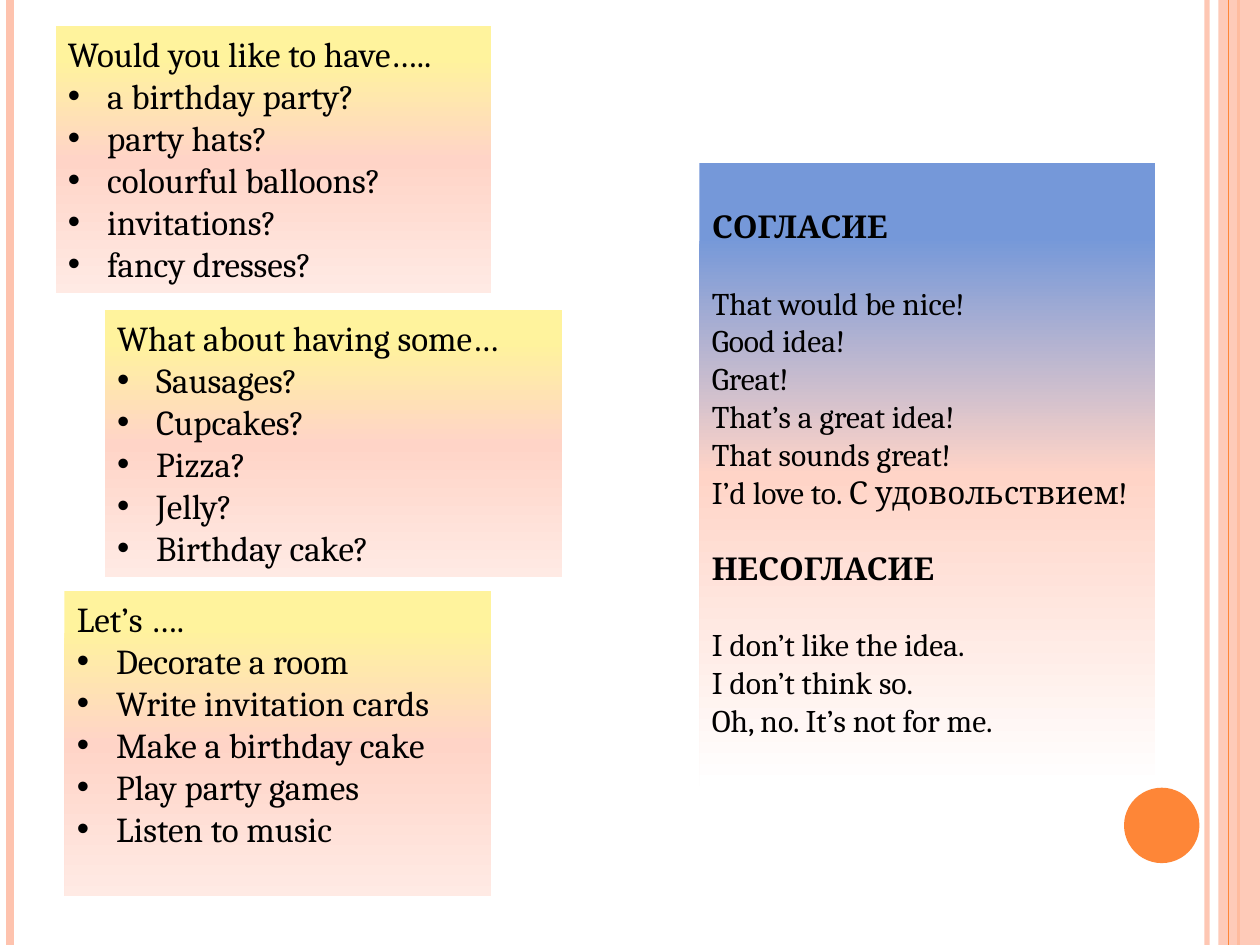
from copy import deepcopy
from dataclasses import dataclass

from lxml import etree
from pptx import Presentation
from pptx.dml.color import RGBColor
from pptx.enum.shapes import MSO_CONNECTOR, MSO_SHAPE
from pptx.enum.text import MSO_ANCHOR, MSO_AUTO_SIZE, PP_ALIGN
from pptx.oxml.ns import qn
from pptx.util import Cm, Pt

STRAIGHT = MSO_CONNECTOR.STRAIGHT
RECTANGLE = MSO_SHAPE.RECTANGLE
OVAL = MSO_SHAPE.OVAL
TOP = MSO_ANCHOR.TOP
NO_AUTOFIT = MSO_AUTO_SIZE.NONE
LEFT = PP_ALIGN.LEFT
BLANK_LAYOUT = 6
SLIDE_WIDTH, SLIDE_HEIGHT = 25.4, 19.05


@dataclass(frozen=True)
class Theme:
    font: str = "Cambria"
    text: str = "000000"
    accent: str = "FE8637"
    pale: str = "FEC3AE"
    list_size: int = 20
    reply_size: int = 18
    reply_gap: int = 22
    list_gradient: tuple = ((12, "FFF39D"), (50, "FFD4C7"), (100, "FFEAE4"))
    reply_gradient: tuple = ((12, "7598D9"), (50, "FFD4C7"), (100, "FFFFFF"))


def apply_format(target, values):
    for name, value in values.items():
        setattr(target, name, value)


class SlideBuilder:
    def __init__(self, slide, theme):
        self.slide = slide
        self.theme = theme

    def set_opacity(self, properties, percent):
        color = next(properties.iter(qn("a:srgbClr")))
        etree.SubElement(color, qn("a:alpha"), val=str(percent * 1000))

    def vertical_line(self, x, color, width, opacity=100):
        line = self.slide.shapes.add_connector(
            STRAIGHT, Cm(x), Cm(0), Cm(x), Cm(SLIDE_HEIGHT))
        line.line.color.rgb = RGBColor.from_string(color)
        line.line.width = Pt(width)
        properties = line._element.spPr
        if opacity < 100:
            self.set_opacity(properties, opacity)
        etree.SubElement(properties, qn("a:effectLst"))

    def plain_shape(self, kind, box):
        shape = self.slide.shapes.add_shape(kind, *map(Cm, box))
        shape.shadow.inherit = False
        shape.line.fill.background()
        return shape

    def solid_shape(self, kind, box, color, opacity=100):
        shape = self.plain_shape(kind, box)
        shape.fill.solid()
        shape.fill.fore_color.rgb = RGBColor.from_string(color)
        if opacity < 100:
            self.set_opacity(shape._element.spPr, opacity)

    def gradient_panel(self, box, stops, top_margin=0.13):
        shape = self.plain_shape(RECTANGLE, box)
        fill = shape.fill
        fill.gradient()
        fill.gradient_angle = 270
        stop_list = next(shape._element.spPr.iter(qn("a:gsLst")))
        stop_list.append(deepcopy(stop_list[-1]))
        for stop, (position, color) in zip(fill.gradient_stops, stops):
            stop.color.rgb = RGBColor.from_string(color)
            stop.position = position / 100
        apply_format(shape.text_frame, {
            "word_wrap": True, "auto_size": NO_AUTOFIT,
            "vertical_anchor": TOP, "margin_top": Cm(top_margin)})
        return shape.text_frame

    def paragraph(self, frame, text, size, bullet=False, bold=False, space=0):
        first = frame.paragraphs[0]
        paragraph = frame.add_paragraph() if first.runs else first
        paragraph.add_run().text = text
        apply_format(paragraph, {"alignment": LEFT, "space_before": Pt(space)})
        if bullet:
            properties = paragraph._p.get_or_add_pPr()
            indent = Cm(0.79)
            properties.set("marL", str(indent))
            properties.set("indent", str(-indent))
            etree.SubElement(properties, qn("a:buFont"), typeface="Arial")
            etree.SubElement(properties, qn("a:buChar"), char="•")
        font = paragraph.runs[0].font
        apply_format(font, {
            "name": self.theme.font, "size": Pt(size), "bold": bold})
        font.color.rgb = RGBColor.from_string(self.theme.text)

    def suggestion_list(self, box, heading, items):
        frame = self.gradient_panel(box, self.theme.list_gradient)
        self.paragraph(frame, heading, self.theme.list_size)
        for item in items:
            self.paragraph(frame, item, self.theme.list_size, bullet=True)

    def reply_panel(self, box, groups):
        theme = self.theme
        frame = self.gradient_panel(box, theme.reply_gradient, top_margin=0.9)
        for group_index, (heading, replies) in enumerate(groups):
            self.paragraph(frame, heading, theme.reply_size, bold=True,
                           space=theme.reply_gap if group_index else 0)
            for index, reply in enumerate(replies):
                self.paragraph(frame, reply, theme.reply_size,
                               space=0 if index else theme.reply_gap)


SUGGESTIONS = [
    ((1.12, 0.53, 8.79, 5.38), "Would you like to have…..",
     ["a birthday party?", "party hats?", "colourful balloons?",
      "invitations?", "fancy dresses?"]),
    ((2.11, 6.25, 9.22, 5.38), "What about having some…",
     ["Sausages?", "Cupcakes?", "Pizza?", "Jelly?", "Birthday cake?"]),
    ((1.3, 11.91, 8.61, 6.15), "Let’s ….",
     ["Decorate a room", "Write invitation cards", "Make a birthday cake",
      "Play party games", "Listen to music"]),
]
REPLIES = [
    ("СОГЛАСИЕ",
     ["That would be nice!", "Good idea!", "Great!", "That’s a great idea!",
      "That sounds great!", "I’d love to. С удовольствием!"]),
    ("НЕСОГЛАСИЕ",
     ["I don’t like the idea.", "I don’t think so.",
      "Oh, no. It’s not for me."]),
]


def main():
    presentation = Presentation()
    apply_format(presentation, {
        "slide_width": Cm(SLIDE_WIDTH), "slide_height": Cm(SLIDE_HEIGHT)})
    slide = presentation.slides.add_slide(
        presentation.slide_layouts[BLANK_LAYOUT])
    theme = Theme()
    builder = SlideBuilder(slide, theme)

    builder.vertical_line(24.33, theme.pale, 3, opacity=93)
    builder.vertical_line(0.2, theme.pale, 4.5)
    builder.vertical_line(24.97, theme.accent, 1.5)
    builder.solid_shape(RECTANGLE, (24.56, 0, 0.84, SLIDE_HEIGHT),
                        theme.pale, opacity=87)
    builder.vertical_line(24.77, theme.accent, 0.75)
    builder.solid_shape(OVAL, (22.66, 15.88, 1.52, 1.52), theme.accent)

    for box, heading, items in SUGGESTIONS:
        builder.suggestion_list(box, heading, items)
    builder.reply_panel((14.1, 3.28, 9.19, 12.57), REPLIES)

    presentation.save("out.pptx")


if __name__ == "__main__":
    main()
